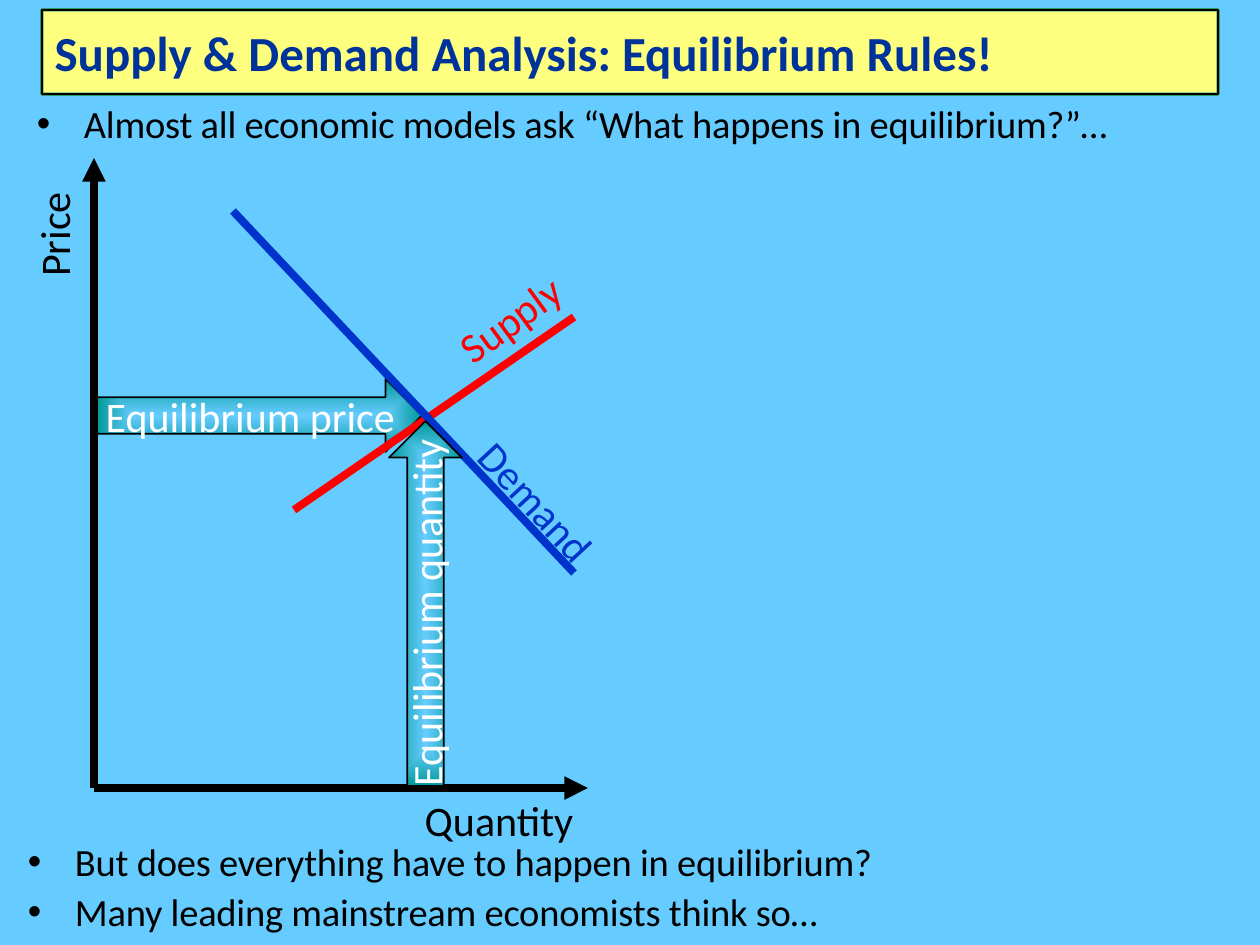
from lxml.etree import SubElement
from pptx import Presentation
from pptx.dml.color import RGBColor
from pptx.enum.shapes import MSO_CONNECTOR, MSO_SHAPE
from pptx.enum.text import MSO_ANCHOR, MSO_AUTO_SIZE, PP_ALIGN
from pptx.oxml.ns import qn
from pptx.util import Emu, Pt

EMU_PER_PX = 914400 / 126
FONT = "Calibri"
BLACK, WHITE, RED, BLUE = "000000", "FFFFFF", "FF0000", "0033CC"
SKY, TEAL = "66CCFF", "009999"


def px(length):
    return Emu(round(length * EMU_PER_PX))


def box(*lengths):
    return [px(length) for length in lengths]


def rgb(code):
    return RGBColor.from_string(code)


def outline(shape, color, width):
    shape.line.color.rgb = rgb(color)
    shape.line.width = Pt(width)


def add_run(paragraph, text, size, color, bold=False):
    run = paragraph.add_run()
    run.text = text
    run.font.name = FONT
    run.font.size = Pt(size)
    run.font.bold = bold
    run.font.color.rgb = rgb(color)
    return run


def add_title(slide, text):
    """Place the title over an opaque panel of the same size."""
    place = box(42, 10, 1176, 84)
    panel = slide.shapes.add_shape(MSO_SHAPE.RECTANGLE, *place)
    panel.shadow.inherit = False
    panel.fill.solid()
    panel.fill.fore_color.rgb = rgb("FFFF66")
    outline(panel, "339966", 2)

    title = slide.shapes.title
    panel.element.addnext(title.element)
    title.left, title.top, title.width, title.height = place
    title.fill.solid()
    title.fill.fore_color.rgb = rgb("FFFF99")
    tint = title.element.spPr.find(qn("a:solidFill"))[0]
    SubElement(tint, qn("a:alpha"), val="50000")
    outline(title, BLACK, 1)
    frame = title.text_frame
    frame.auto_size = MSO_AUTO_SIZE.NONE
    frame.word_wrap = True
    frame.vertical_anchor = MSO_ANCHOR.MIDDLE
    paragraph = frame.paragraphs[0]
    paragraph.alignment = PP_ALIGN.LEFT
    add_run(paragraph, text, 28, "003399", bold=True)


def add_bullets(slide, place, lines):
    frame = slide.shapes.add_textbox(*box(*place)).text_frame
    frame.word_wrap = True
    frame.margin_left = frame.margin_right = px(5)
    for index, line in enumerate(lines):
        paragraph = frame.add_paragraph() if index else frame.paragraphs[0]
        paragraph.space_before = Pt(2)
        run = add_run(paragraph, line, 22, BLACK)
        run.font._element.set("spc", "-10")
        properties = paragraph._p.get_or_add_pPr()
        properties.set("marL", str(px(47)))
        properties.set("indent", str(-px(47)))
        SubElement(properties, qn("a:buFont"), typeface="Arial")
        SubElement(properties, qn("a:buChar"), char="•")


def write_centred(shape, text, color):
    frame = shape.text_frame
    frame.word_wrap = False
    paragraph = frame.paragraphs[0]
    paragraph.alignment = PP_ALIGN.CENTER
    add_run(paragraph, text, 24, color)


def add_label(slide, place, text, color=BLACK, rotation=0):
    label = slide.shapes.add_textbox(*box(*place))
    label.rotation = rotation
    write_centred(label, text, color)
    label.text_frame.auto_size = MSO_AUTO_SIZE.SHAPE_TO_FIT_TEXT


def add_block_arrow(slide, place, text, rotation=0):
    """Add an arrow whose gradient spreads from its centre to its edges."""
    arrow = slide.shapes.add_shape(MSO_SHAPE.RIGHT_ARROW, *box(*place))
    arrow.shadow.inherit = False
    arrow.rotation = rotation
    arrow.fill.gradient()
    for stop, position, color in zip(arrow.fill.gradient_stops, (0, 1), (SKY, TEAL)):
        stop.position = position
        stop.color.rgb = rgb(color)
    gradient = arrow.element.spPr.find(qn("a:gradFill"))
    gradient.remove(gradient.find(qn("a:lin")))
    spread = SubElement(gradient, qn("a:path"), path="rect")
    SubElement(spread, qn("a:fillToRect"), l="50000", t="50000", r="50000", b="50000")
    outline(arrow, BLACK, 1)
    arrow.text_frame.vertical_anchor = MSO_ANCHOR.MIDDLE
    write_centred(arrow, text, WHITE)


def add_line(slide, ends, color, arrowhead=False):
    line = slide.shapes.add_connector(MSO_CONNECTOR.STRAIGHT, *box(*ends))
    outline(line, color, 4.5)
    if arrowhead:
        SubElement(line.line._get_or_add_ln(), qn("a:tailEnd"), type="triangle")
    SubElement(line._element.spPr, qn("a:effectLst"))


def main():
    deck = Presentation()
    deck.slide_width, deck.slide_height = box(1260, 945)
    slide = deck.slides.add_slide(deck.slide_layouts[5])
    slide.background.fill.solid()
    slide.background.fill.fore_color.rgb = rgb(SKY)

    add_title(slide, "Supply & Demand Analysis: Equilibrium Rules!")
    add_bullets(slide, (32, 94, 1207, 53),
                ["Almost all economic models ask “What happens in equilibrium?”…"])

    add_block_arrow(slide, (97, 379, 325, 73), "Equilibrium price")
    add_line(slide, (94, 788, 94, 158), BLACK, arrowhead=True)
    add_line(slide, (94, 788, 588, 788), BLACK, arrowhead=True)
    add_line(slide, (574, 317, 294, 510), RED)
    add_line(slide, (233, 211, 574, 573), BLUE)
    add_label(slide, (449, 470, 176, 63), "Demand", BLUE, 47.2)
    add_label(slide, (437, 287, 146, 63), "Supply", RED, 323.8)
    add_block_arrow(slide, (243, 567, 365, 73), "Equilibrium quantity", 270)
    add_label(slide, (409, 788, 180, 63), "Quantity")
    add_label(slide, (-4, 203, 115, 63), "Price", rotation=270)

    add_bullets(slide, (23, 832, 998, 103),
                ["But does everything have to happen in equilibrium?",
                 "Many leading mainstream economists think so…"])
    deck.save("out.pptx")


if __name__ == "__main__":
    main()
